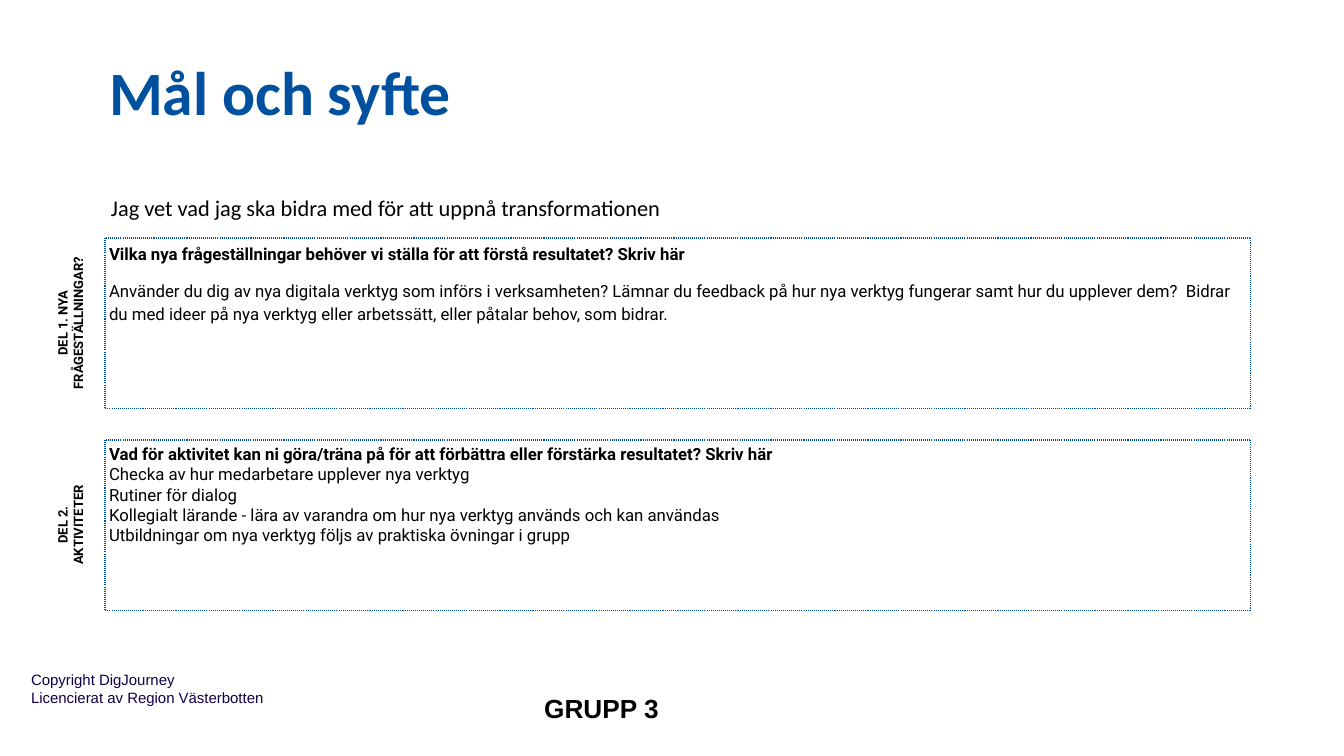
"""Build the slide on goals and purpose for group 3."""
from pptx import Presentation
from pptx.dml.color import RGBColor
from pptx.enum.dml import MSO_LINE
from pptx.enum.text import MSO_ANCHOR, MSO_AUTO_SIZE, PP_ALIGN
from pptx.util import Emu, Pt

SCALE = 914400 / 100.8
BLUE = RGBColor(0x00, 0x50, 0xA0)
NAVY = RGBColor(0x11, 0x00, 0x46)
BLACK = RGBColor(0x00, 0x00, 0x00)
LEFT, CENTER = PP_ALIGN.LEFT, PP_ALIGN.CENTER
TOP, BOTTOM = MSO_ANCHOR.TOP, MSO_ANCHOR.BOTTOM
FIXED, GROW = MSO_AUTO_SIZE.NONE, MSO_AUTO_SIZE.SHAPE_TO_FIT_TEXT
DOT = MSO_LINE.ROUND_DOT


def px(num):
    return Emu(round(num * SCALE))


def write(shape, area, lines, size, font, color=BLACK, bold=1, align=LEFT,
          anchor=TOP, inset=4, fit=FIXED, lead=1.0, before=0, after=0):
    """Place a shape and fill it with text; bold counts the leading bold lines."""
    shape.left, shape.top, shape.width, shape.height = map(px, area)
    frame = shape.text_frame
    frame.word_wrap = True
    frame.auto_size = fit
    frame.vertical_anchor = anchor
    frame.margin_left = frame.margin_right = px(inset)
    frame.margin_top = frame.margin_bottom = px(inset)
    for row, line in enumerate(lines):
        para = frame.add_paragraph() if row else frame.paragraphs[0]
        props = para._p.get_or_add_pPr()
        props.set("marL", "0")
        props.set("indent", "0")
        props.insert_element_before(
            props.makeelement(
                "{http://schemas.openxmlformats.org/drawingml/2006/main}buNone"),
            "a:tabLst", "a:defRPr", "a:extLst")
        para.alignment = align
        para.line_spacing = lead
        para.space_before = Pt(before if row else 0)
        para.space_after = Pt(after)
        run = para.add_run()
        run.text = line
        run.font.size = Pt(size)
        run.font.name = font
        run.font.bold = row < bold
        run.font.color.rgb = color


deck = Presentation()
deck.slide_width, deck.slide_height = px(1344), px(756)
slide = deck.slides.add_slide(deck.slide_layouts[4])
shapes = slide.shapes
title, intro, ask, spare, act = slide.placeholders
spare._element.getparent().remove(spare._element)

write(title, (105, -5, 1000, 137), ["Mål och syfte"], 44, "Calibri", BLUE,
      anchor=BOTTOM)
write(intro, (107, 145, 782, 80),
      ["Jag vet vad jag ska bidra med för att uppnå transformationen"],
      16, "Calibri", bold=0, anchor=BOTTOM, after=5.3)

parts = [
    (ask, ["DEL 1. NYA FRÅGESTÄLLNINGAR?"], 1.1, 10.7, [
        "Vilka nya frågeställningar behöver vi ställa för att förstå resultatet? Skriv här",
        "Använder du dig av nya digitala verktyg som införs i verksamheten? "
        "Lämnar du feedback på hur nya verktyg fungerar samt hur du upplever dem?  "
        "Bidrar du med ideer på nya verktyg eller arbetssätt, eller påtalar behov, "
        "som bidrar."]),
    (act, ["DEL 2.", "AKTIVITETER"], 1.0, 0, [
        "Vad för aktivitet kan ni göra/träna på för att förbättra eller förstärka "
        "resultatet? Skriv här",
        "Checka av hur medarbetare upplever nya verktyg",
        "Rutiner för dialog",
        "Kollegialt lärande - lära av varandra om hur nya verktyg används och kan användas",
        "Utbildningar om nya verktyg följs av praktiska övningar i grupp"]),
]
for step, (box, label, lead, before, lines) in enumerate(parts):
    top = 238 + 202 * step
    write(box, (105, top, 1146, 171), lines, 12, "Roboto", lead=lead, before=before)
    box.line.color.rgb = BLUE
    box.line.width = Pt(0.75)
    box.line.dash_style = DOT
    side = shapes.add_textbox(0, 0, 0, 0)
    write(side, (-15, top + 56, 171, 58), label, 9.3, "Roboto", bold=2,
          align=CENTER, inset=13, fit=GROW)
    side.rotation = 270

write(shapes.add_textbox(0, 0, 0, 0), (18, 658, 440, 64),
      ["Copyright DigJourney", "Licencierat av Region Västerbotten"],
      10.7, "Arial", NAVY, bold=0, inset=13, fit=GROW)
write(shapes.add_textbox(0, 0, 0, 0), (503, 679, 197, 58), ["GRUPP 3"],
      18.7, "Arial", align=CENTER, inset=13, fit=GROW)

deck.save("out.pptx")
